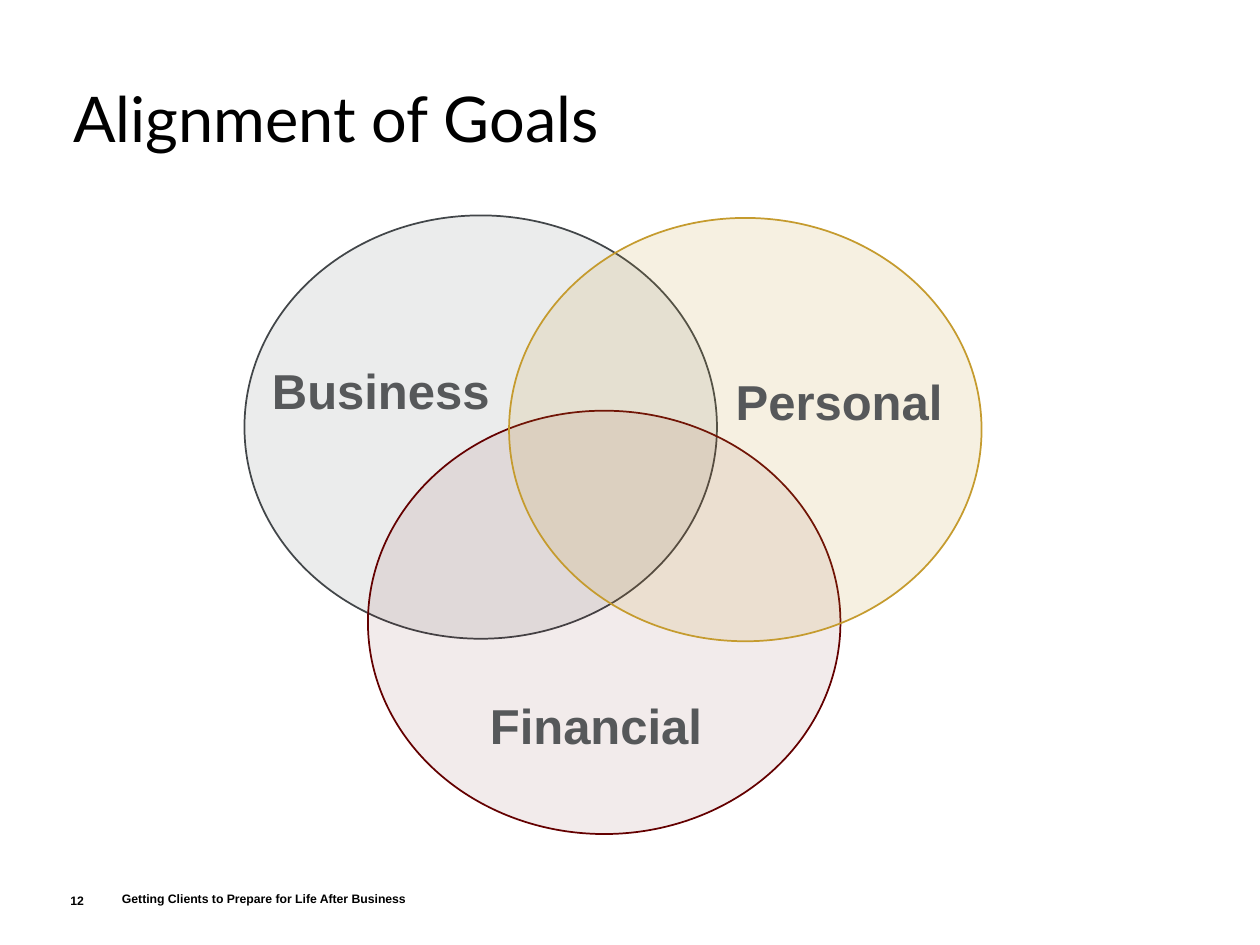
from dataclasses import dataclass

from lxml.etree import SubElement
from pptx import Presentation
from pptx.dml.color import RGBColor
from pptx.enum.shapes import MSO_SHAPE
from pptx.enum.text import MSO_ANCHOR, MSO_AUTO_SIZE, PP_ALIGN
from pptx.oxml.ns import qn
from pptx.util import Inches, Pt


@dataclass(frozen=True)
class Theme:
    ink: str = "000000"
    label: str = "56585A"
    business: str = "424649"
    financial: str = "640000"
    personal: str = "C59B2E"
    heading_font: str = "Lato"
    body_font: str = "Arial"
    title_size: int = 36
    label_size: int = 28
    footer_size: int = 7


class GoalSlide:
    """Places elements on a grid of 100 columns by 75 rows."""

    COLUMNS, ROWS = 100, 75

    def __init__(self, deck, theme):
        self.theme = theme
        self.column = deck.slide_width / self.COLUMNS
        self.row = deck.slide_height / self.ROWS
        self.page = deck.slides.add_slide(deck.slide_layouts[5])

    def place(self, left, top, width, height):
        return (round(left * self.column), round(top * self.row),
                round(width * self.column), round(height * self.row))

    def fill_text(self, box, text, anchor, color, **font):
        frame = box.text_frame
        layout = {"word_wrap": True, "auto_size": MSO_AUTO_SIZE.NONE, "vertical_anchor": anchor}
        for name, value in layout.items():
            setattr(frame, name, value)
        para = frame.paragraphs[0]
        para.alignment = PP_ALIGN.LEFT
        span = para.add_run()
        span.text = text
        for name, value in font.items():
            setattr(span.font, name, value)
        span.font.color.rgb = RGBColor.from_string(color)
        return para

    def title(self, text, *area):
        box = self.page.shapes.title
        box.left, box.top, box.width, box.height = self.place(*area)
        self.fill_text(box, text, MSO_ANCHOR.TOP, self.theme.ink,
                       name=self.theme.heading_font, size=Pt(self.theme.title_size))

    def text(self, text, area, size, color, anchor=MSO_ANCHOR.TOP):
        box = self.page.shapes.add_textbox(*self.place(*area))
        return self.fill_text(box, text, anchor, color, name=self.theme.body_font,
                              size=Pt(size), bold=True)

    def label(self, text, *area):
        para = self.text(text, area, self.theme.label_size, self.theme.label)
        para.line_spacing = 1.07
        para.space_after = Pt(8)

    def footer(self, text, *area):
        self.text(text, area, self.theme.footer_size, self.theme.ink, MSO_ANCHOR.MIDDLE)

    def circle(self, color, opacity, *area):
        shape = self.page.shapes.add_shape(MSO_SHAPE.OVAL, *self.place(*area))
        shape.shadow.inherit = False
        shape.fill.solid()
        shape.fill.fore_color.rgb = RGBColor.from_string(color)
        shape.line.color.rgb = RGBColor.from_string(color)
        shape.line.width = Pt(1)
        # Let the overlapping circles show through
        fill_color = shape.element.spPr.find(qn("a:solidFill"))[0]
        SubElement(fill_color, qn("a:alpha"), val=str(opacity * 1000))


def main():
    deck = Presentation()
    deck.slide_width, deck.slide_height = Inches(10), Inches(7.5)
    theme = Theme()
    slide = GoalSlide(deck, theme)

    # Title
    slide.title("Alignment of Goals", 4.8, 5.8, 68.4, 13.9)

    # Overlapping goals, back to front: circle corner, then label area
    circle_size = (37.5, 33.6)
    goals = [
        ("Business", theme.business, 10, (19.4, 17.1), (20.6, 27.8, 24.1, 7.7)),
        ("Financial", theme.financial, 8, (29.2, 32.6), (37.9, 54.4, 20.1, 4.4)),
        ("Personal", theme.personal, 14, (40.4, 17.3), (57.4, 28.7, 19.2, 7.7)),
    ]
    for name, color, opacity, corner, label_area in goals:
        slide.circle(color, opacity, *corner, *circle_size)
        slide.label(name, *label_area)

    # Page number and footer
    slide.footer("12", 4.6, 70.2, 3.9, 2.5)
    slide.footer("Getting Clients to Prepare for Life After Business", 8.7, 70.1, 32.4, 2.5)

    deck.save("out.pptx")


if __name__ == "__main__":
    main()
